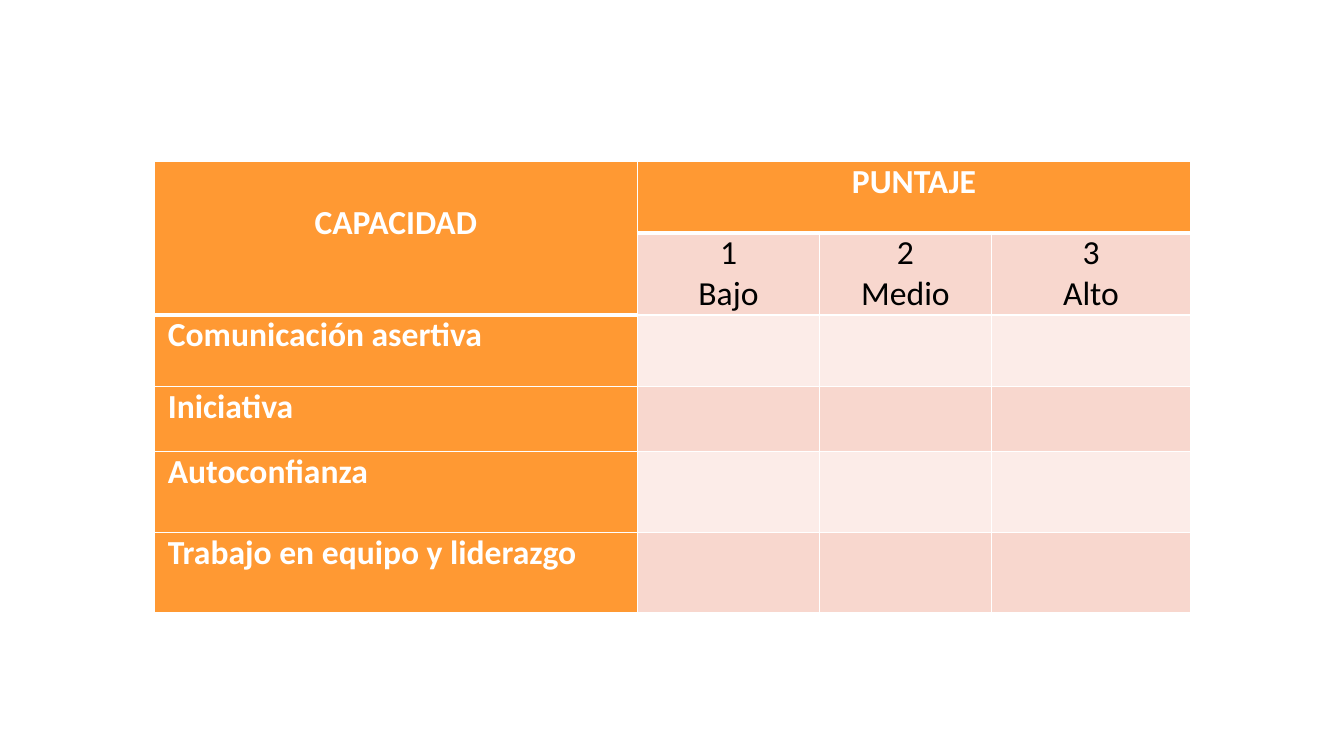
from lxml.etree import SubElement as Sub
from pptx import Presentation
from pptx.dml.color import RGBColor
from pptx.enum.text import PP_ALIGN as Align
from pptx.oxml.ns import qn
from pptx.util import Cm, Pt

ORANGE, ROSE, PALE = "FF9933", "F8D7CE", "FCECE8"
WHITE, BLACK = "FFFFFF", "000000"
HEAD = {"bold": True, "ink": WHITE, "align": Align.CENTER}
SCORE = {"bold": False, "ink": BLACK, "align": Align.CENTER}
SKILL = {"bold": True, "ink": WHITE, "align": Align.LEFT}
WIDTHS = [12.17, 4.6, 4.32, 5.03]
HEIGHTS = [1.8, 2.06, 1.8, 1.65, 2.03, 2.03]
SCORES = ["1\nBajo", "2\nMedio", "3\nAlto"]
SKILLS = ["Comunicación asertiva", "Iniciativa", "Autoconfianza",
          "Trabajo en equipo y liderazgo"]


def hue(code):
    return RGBColor.from_string(code)


class Deck:
    """Holds the text style and the current slide."""

    def __init__(self):
        self.show = Presentation()
        self.show.slide_width, self.show.slide_height = Cm(33.87), Cm(19.05)
        self.slide = self.show.slides.add_slide(self.show.slide_layouts[6])
        self.font = {"name": "Calibri", "size": Pt(24)}

    def table(self, left, top, widths, heights):
        frame = self.slide.shapes.add_table(
            len(heights), len(widths), Cm(left), Cm(top),
            Cm(sum(widths)), Cm(sum(heights)))
        grid = frame.table
        for flag in ("first_row", "horz_banding"):
            setattr(grid, flag, False)
        for col, width in zip(grid.columns, widths):
            col.width = Cm(width)
        for row, height in zip(grid.rows, heights):
            row.height = Cm(height)
        return grid

    def edge(self, cell, top, base):
        props = cell._tc.get_or_add_tcPr()
        for side, width in zip("LRTB", (1, 1, top, base)):
            line = Sub(props, qn(f"a:ln{side}"), w=str(Pt(width)))
            Sub(Sub(line, qn("a:solidFill")), qn("a:srgbClr"), val=WHITE)

    def paint(self, cell, code):
        cell.fill.solid()
        cell.fill.fore_color.rgb = hue(code)

    def label(self, cell, text, look, left=0.15, top=0):
        pads = {"left": left, "right": 0.15, "top": top, "bottom": 0}
        for side, size in pads.items():
            setattr(cell, f"margin_{side}", Cm(size))
        cell.text = text
        for para in cell.text_frame.paragraphs:
            para.alignment = look["align"]
            for run in para.runs:
                for key, value in {**self.font, "bold": look["bold"]}.items():
                    setattr(run.font, key, value)
                run.font.color.rgb = hue(look["ink"])

    def save(self):
        self.show.save("out.pptx")


def main():
    deck = Deck()
    grid = deck.table(3.89, 4.07, WIDTHS, HEIGHTS)
    for r in range(len(HEIGHTS)):
        for c in range(len(WIDTHS)):
            cell = grid.cell(r, c)
            split = 2 if c == 0 else 1
            deck.edge(cell, 3 if r == split else 1, 3 if r < split else 1)
            band = ROSE if r % 2 else PALE
            deck.paint(cell, ORANGE if r == 0 or c == 0 else band)

    grid.cell(0, 0).merge(grid.cell(1, 0))
    grid.cell(0, 1).merge(grid.cell(0, 3))
    deck.label(grid.cell(0, 0), "CAPACIDAD", HEAD, top=1.03)
    deck.label(grid.cell(0, 1), "PUNTAJE", HEAD)
    for c, score in enumerate(SCORES, 1):
        deck.label(grid.cell(1, c), score, SCORE)
    for r, skill in enumerate(SKILLS, 2):
        deck.label(grid.cell(r, 0), skill, SKILL, left=0.34)
    deck.save()


if __name__ == "__main__":
    main()
